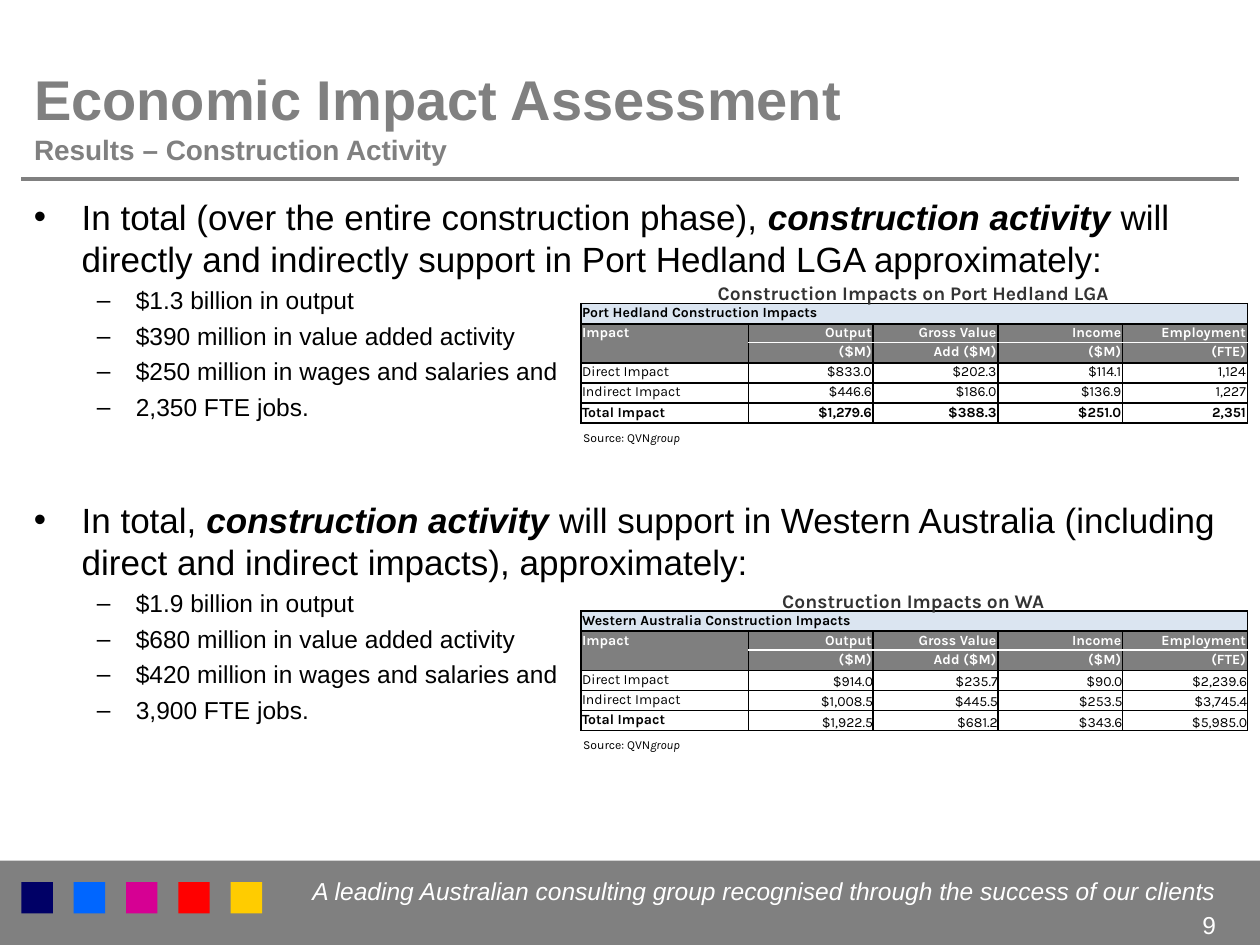
from lxml import etree
from pptx import Presentation
from pptx.dml.color import RGBColor
from pptx.enum import shapes, text
from pptx.oxml import ns
from pptx.util import Inches, Pt

GREY = RGBColor(0x80, 0x80, 0x80)
HEADER_GREY = RGBColor(0x7F, 0x7F, 0x7F)
CAPTION_GREY = RGBColor(0x33, 0x33, 0x33)
PALE_BLUE = RGBColor(0xDB, 0xE5, 0xF1)
BLACK = RGBColor(0, 0, 0)
WHITE = RGBColor(0xFF, 0xFF, 0xFF)
SQUARE_COLORS = [RGBColor(0, 0, 0x66), RGBColor(0, 0x66, 0xFF), RGBColor(0xD6, 0, 0x93),
                 RGBColor(0xFF, 0, 0), RGBColor(0xFF, 0xCC, 0)]
LEFT, RIGHT, CENTER = text.PP_ALIGN.LEFT, text.PP_ALIGN.RIGHT, text.PP_ALIGN.CENTER
TOP, MIDDLE, BOTTOM = text.MSO_ANCHOR.TOP, text.MSO_ANCHOR.MIDDLE, text.MSO_ANCHOR.BOTTOM

TABLE_LEFT, TABLE_WIDTH = 4.61, 5.28
COLUMN_WIDTHS = [1.33, 0.99, 0.99, 0.99, 0.99]
ROW_HEIGHTS = [0.16, 0.15, 0.16, 0.16, 0.16, 0.16]
HEADERS = [["Impact", "Output", "Gross Value", "Income", "Employment"],
           ["", "($M)", "Add ($M)", "($M)", "(FTE)"]]
HEDLAND_ROWS = [["Port Hedland Construction Impacts"], *HEADERS,
                ["Direct Impact", "$833.0", "$202.3", "$114.1", "1,124"],
                ["Indirect Impact", "$446.6", "$186.0", "$136.9", "1,227"],
                ["Total Impact", "$1,279.6", "$388.3", "$251.0", "2,351"]]
WA_ROWS = [["Western Australia Construction Impacts"], *HEADERS,
           ["Direct Impact", "$914.0", "$235.7", "$90.0", "$2,239.6"],
           ["Indirect Impact", "$1,008.5", "$445.5", "$253.5", "$3,745.4"],
           ["Total Impact", "$1,922.5", "$681.2", "$343.6", "$5,985.0"]]

FINDINGS = [
    (["In total (over the entire construction phase), ", "construction activity ",
      "will directly and indirectly support in Port Hedland LGA approximately:"],
     ["$1.3 billion in output", "$390 million in value added activity",
      "$250 million in wages and salaries and", "2,350 FTE jobs."]),
    (["In total, ", "construction activity ",
      "will support in Western Australia (including direct and indirect impacts), approximately:"],
     ["$1.9 billion in output", "$680 million in value added activity",
      "$420 million in wages and salaries and", "3,900 FTE jobs."]),
]


def add_run(paragraph, words, size, color, font="Arial", bold=False, italic=False):
    run = paragraph.add_run()
    run.text = words
    run.font.name, run.font.size = font, Pt(size)
    run.font.bold, run.font.italic = bold, italic
    run.font.color.rgb = color


def add_text_box(slide, left, top, width, height, align=LEFT, anchor=TOP):
    """Add a wrapping text box and return its first paragraph."""
    box = slide.shapes.add_textbox(Inches(left), Inches(top), Inches(width), Inches(height))
    frame = box.text_frame
    frame.word_wrap = True
    frame.vertical_anchor = anchor
    frame.paragraphs[0].alignment = align
    return frame.paragraphs[0], frame


def add_rectangle(slide, left, top, width, height, color):
    shape = slide.shapes.add_shape(shapes.MSO_SHAPE.RECTANGLE, Inches(left), Inches(top),
                                   Inches(width), Inches(height))
    shape.shadow.inherit = False
    shape.fill.solid()
    shape.fill.fore_color.rgb = color
    shape.line.fill.background()


def add_rule(slide):
    rule = slide.shapes.add_connector(shapes.MSO_CONNECTOR.STRAIGHT, Inches(0.17), Inches(1.42),
                                      Inches(9.83), Inches(1.42))
    rule.line.color.rgb = GREY
    rule.line.width = Pt(2)
    etree.SubElement(rule._element.spPr, ns.qn("a:effectLst"))


def add_footer(slide):
    add_rectangle(slide, 0, 6.83, 10, 0.67, GREY)
    for index, color in enumerate(SQUARE_COLORS):
        add_rectangle(slide, 0.17 + index * 0.415, 7, 0.25, 0.25, color)
    slogan, _ = add_text_box(slide, 2.33, 6.9, 7.42, 0.33, RIGHT)
    add_run(slogan, "A leading Australian consulting group recognised through the success of our clients",
            14, WHITE, italic=True)
    number, _ = add_text_box(slide, 8.92, 7.17, 0.83, 0.33, RIGHT)
    add_run(number, "9", 14, WHITE)


def set_title(slide):
    title = slide.shapes.title
    title.left, title.top = Inches(0.17), Inches(0.5)
    title.width, title.height = Inches(8.51), Inches(0.83)
    frame = title.text_frame
    frame.auto_size = text.MSO_AUTO_SIZE.NONE
    frame.vertical_anchor = MIDDLE
    paragraph = frame.paragraphs[0]
    paragraph.alignment = LEFT
    add_run(paragraph, "Economic Impact Assessment", 32, GREY, bold=True)
    paragraph.add_line_break()
    add_run(paragraph, "Results – Construction Activity", 16, GREY, bold=True)


def set_bullet(paragraph, symbol, margin, hanging):
    properties = paragraph._p.get_or_add_pPr()
    properties.set("marL", str(Inches(margin)))
    properties.set("indent", str(-Inches(hanging)))
    etree.SubElement(properties, ns.qn("a:buFont"), typeface="Arial")
    etree.SubElement(properties, ns.qn("a:buChar"), char=symbol)


def add_findings(slide):
    paragraph, frame = add_text_box(slide, 0.17, 1.5, 9.67, 5.32)
    for index, (parts, figures) in enumerate(FINDINGS):
        if index:
            paragraph = frame.add_paragraph()
            paragraph.space_before = Pt(44)
        set_bullet(paragraph, "•", 0.38, 0.38)
        for position, part in enumerate(parts):
            emphasis = position == 1
            add_run(paragraph, part, 20, BLACK, bold=emphasis, italic=emphasis)
        for figure in figures:
            item = frame.add_paragraph()
            item.level = 1
            set_bullet(item, "–", 0.81, 0.31)
            item.space_before = Pt(3.5)
            add_run(item, figure, 14, BLACK)


def set_borders(cell, sides):
    properties = cell._tc.get_or_add_tcPr()
    for side in sides:
        line = etree.SubElement(properties, ns.qn(f"a:ln{side}"), w=str(Pt(1)))
        fill = etree.SubElement(line, ns.qn("a:solidFill"))
        etree.SubElement(fill, ns.qn("a:srgbClr"), val=str(BLACK))


def format_cell(cell, words, row, column, tight_figures):
    """Style a cell; tight figures sit on the cell bottom with no margins and no bold."""
    is_header = row in (1, 2)
    tight = tight_figures and row > 2 and column > 0
    margin = 0 if tight else Inches(0.01)
    cell.margin_left = cell.margin_top = cell.margin_right = margin
    cell.margin_bottom = 0
    cell.vertical_anchor = BOTTOM if tight else TOP
    split_sides = {1: "LRT", 2: "LRB"}
    set_borders(cell, split_sides.get(row, "LRTB") if column else "LRTB")
    if row < 3:
        cell.fill.solid()
        cell.fill.fore_color.rgb = HEADER_GREY if is_header else PALE_BLUE
    else:
        cell.fill.background()
    if words:
        paragraph = cell.text_frame.paragraphs[0]
        paragraph.alignment = RIGHT if column else LEFT
        add_run(paragraph, words, 8, WHITE if is_header else BLACK, "Karla",
                bold=row not in (3, 4) and not tight)


def add_impact_table(slide, top, rows, tight_figures):
    frame = slide.shapes.add_table(len(rows), len(COLUMN_WIDTHS), Inches(TABLE_LEFT), Inches(top),
                                   Inches(TABLE_WIDTH), Inches(sum(ROW_HEIGHTS)))
    table = frame.table
    table.first_row = table.horz_banding = False
    for column, width in zip(table.columns, COLUMN_WIDTHS):
        column.width = Inches(width)
    for row, height in zip(table.rows, ROW_HEIGHTS):
        row.height = Inches(height)
    table.cell(0, 0).merge(table.cell(0, 4))
    table.cell(1, 0).merge(table.cell(2, 0))
    for row in range(len(rows)):
        for column in range(len(COLUMN_WIDTHS)):
            words = rows[row][column] if column < len(rows[row]) else ""
            format_cell(table.cell(row, column), words, row, column, tight_figures)


def add_impact_panel(slide, top, caption, rows, tight_figures=False):
    """Add a table with its caption above and its source line below."""
    add_impact_table(slide, top, rows, tight_figures)
    heading, _ = add_text_box(slide, TABLE_LEFT, top - 0.23, TABLE_WIDTH, 0.29, CENTER, MIDDLE)
    add_run(heading, caption, 11, CAPTION_GREY, "Karla", bold=True)
    source, _ = add_text_box(slide, 4.53, top + 0.95, 2.86, 0.22, anchor=MIDDLE)
    add_run(source, "Source: QVN", 7, BLACK, "Karla")
    add_run(source, "group", 7, BLACK, "Karla", italic=True)


def main():
    presentation = Presentation()
    presentation.slide_width, presentation.slide_height = Inches(10), Inches(7.5)
    slide = presentation.slides.add_slide(presentation.slide_layouts[5])
    add_footer(slide)
    add_rule(slide)
    set_title(slide)
    add_findings(slide)
    add_impact_panel(slide, 2.41, "Construction Impacts on Port Hedland LGA", HEDLAND_ROWS)
    add_impact_panel(slide, 4.85, "Construction Impacts on WA", WA_ROWS, tight_figures=True)
    presentation.save("out.pptx")


if __name__ == "__main__":
    main()
